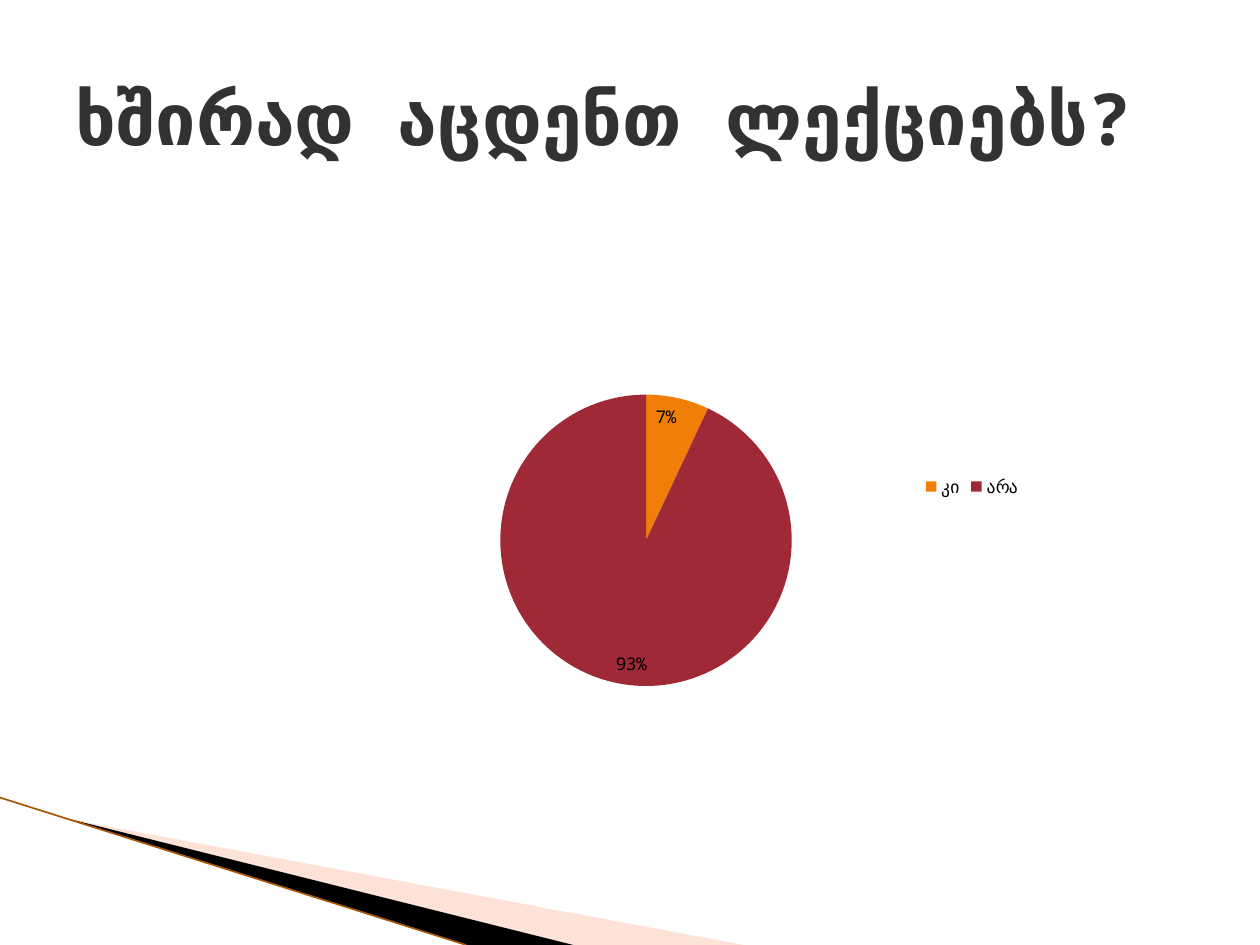
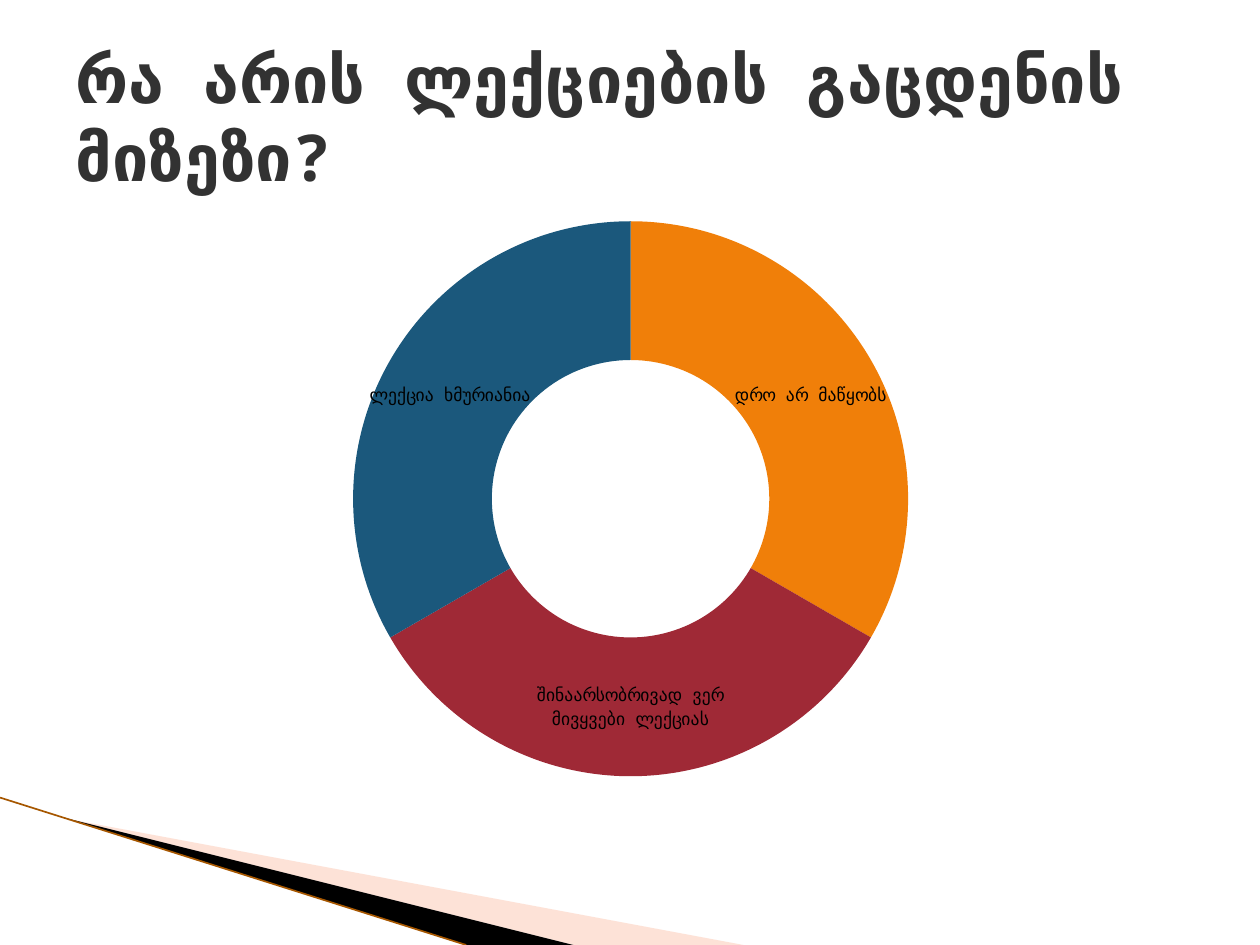
from lxml import etree
from pptx import Presentation
from pptx.chart import data
from pptx.dml import color
from pptx.enum import chart as charts, shapes, text
from pptx.oxml import ns
from pptx.util import Inches, Pt

WIDE, HIGH = Inches(10), Inches(7.5)
FONT = "Noto Sans Mono"
INK, BLACK, PEACH, BROWN = "323232", "000000", "FCB79B", "A65700"
SLICES = ["F07F09", "9F2936", "1B587C"]


def rgb(code):
    return color.RGBColor.from_string(code)


def spot(x, y):
    return round(x * WIDE), round(y * HIGH)


def style(font, size, code, bold=False):
    font.name, font.size, font.bold = FONT, Pt(size), bold
    font.color.rgb = rgb(code)


def wedge(slide, points, code, alpha=100):
    first, *rest = [spot(x, y) for x, y in points]
    pen = slide.shapes.build_freeform(*first)
    pen.add_line_segments(rest)
    shape = pen.convert_to_shape()
    shape.shadow.inherit = False
    shape.line.fill.background()
    shape.fill.solid()
    shape.fill.fore_color.rgb = rgb(code)
    if alpha < 100:
        tint = shape.element.spPr.find(".//" + ns.qn("a:srgbClr"))
        etree.SubElement(tint, ns.qn("a:alpha"), val=str(alpha * 1000))


def rule(slide, start, end, code, width):
    line = slide.shapes.add_connector(
        shapes.MSO_CONNECTOR.STRAIGHT, *spot(*start), *spot(*end))
    line.line.color.rgb = rgb(code)
    line.line.width = Pt(width)
    etree.SubElement(line.element.spPr, ns.qn("a:effectLst"))


def corner(slide):
    wedge(slide, [(0.055, 0.867), (0.59, 1), (0.455, 1)], PEACH, 40)
    wedge(slide, [(0.053, 0.866), (0.455, 1), (0.37, 1)], BLACK)
    rule(slide, (0, 0.844), (0.37, 1), BROWN, 0.95)


def title(slide, words, size):
    box = slide.shapes.add_textbox(*spot(0.05, 0.04), *spot(0.9, 0.167))
    frame = box.text_frame
    frame.word_wrap = True
    frame.vertical_anchor = text.MSO_ANCHOR.MIDDLE
    run = frame.paragraphs[0].add_run()
    run.text = words
    style(run.font, size, INK, True)


def place(parent, index, **sizes):
    for old in parent.findall(ns.qn("c:layout")):
        parent.remove(old)
    layout = etree.Element(ns.qn("c:layout"))
    manual = etree.SubElement(layout, ns.qn("c:manualLayout"))
    if "w" in sizes:
        etree.SubElement(manual, ns.qn("c:layoutTarget"), val="inner")
    for axis in "xy":
        etree.SubElement(manual, ns.qn(f"c:{axis}Mode"), val="edge")
    for key, share in sizes.items():
        etree.SubElement(manual, ns.qn(f"c:{key}"), val=str(share))
    parent.insert(index, layout)


def round_chart(slide, kind, at, size, names, values, plot):
    source = data.CategoryChartData()
    source.categories = names
    source.add_series("Series 1", values)
    chart = slide.shapes.add_chart(kind, *spot(*at), *spot(*size), source).chart
    chart.has_title = chart.has_legend = False
    style(chart.font, 10, BLACK)
    pie = chart.plots[0]
    pie.vary_by_categories = True
    for i in range(len(names)):
        fill = pie.series[0].points[i].format.fill
        fill.solid()
        fill.fore_color.rgb = rgb(SLICES[i])
    pie.has_data_labels = True
    pie.data_labels.show_value = False
    area = chart.element if hasattr(chart, "element") else chart._chartSpace
    place(area.find(".//" + ns.qn("c:plotArea")), 0, **plot)
    return chart


def skips(slide):
    chart = round_chart(
        slide, charts.XL_CHART_TYPE.PIE, (0.098, 0.216), (0.843, 0.568),
        ["კი", "არა"], [7, 93], dict(x=0.085, y=0.355, w=0.814, h=0.543))
    labels = chart.plots[0].data_labels
    labels.show_percentage = True
    labels.number_format, labels.number_format_is_linked = "0%", False
    labels.position = charts.XL_LABEL_POSITION.INSIDE_END
    chart.has_legend = True
    key = chart.legend
    key.position = charts.XL_LEGEND_POSITION.TOP
    key.include_in_layout = False
    style(key.font, 10, BLACK)
    place(key._element, 1, x=0.75, y=0.495)


def causes(slide):
    chart = round_chart(
        slide, charts.XL_CHART_TYPE.DOUGHNUT, (0.051, 0.216), (0.899, 0.641),
        ["დრო არ მაწყობს", "შინაარსობრივად ვერ მივყვები ლექციას",
         "ლექცია ხმურიანია"],
        [33, 33, 33], dict(x=0.255, y=0.028, w=0.49, h=0.917))
    chart.plots[0].data_labels.show_category_name = True


def main():
    deck = Presentation()
    deck.slide_width, deck.slide_height = WIDE, HIGH
    for words, size, draw in [
            ("ხშირად აცდენთ ლექციებს?", 41, skips),
            ("რა არის ლექციების გაცდენის მიზეზი?", 36.9, causes)]:
        slide = deck.slides.add_slide(deck.slide_layouts[6])
        corner(slide)
        title(slide, words, size)
        draw(slide)
    deck.save("out.pptx")


if __name__ == "__main__":
    main()
